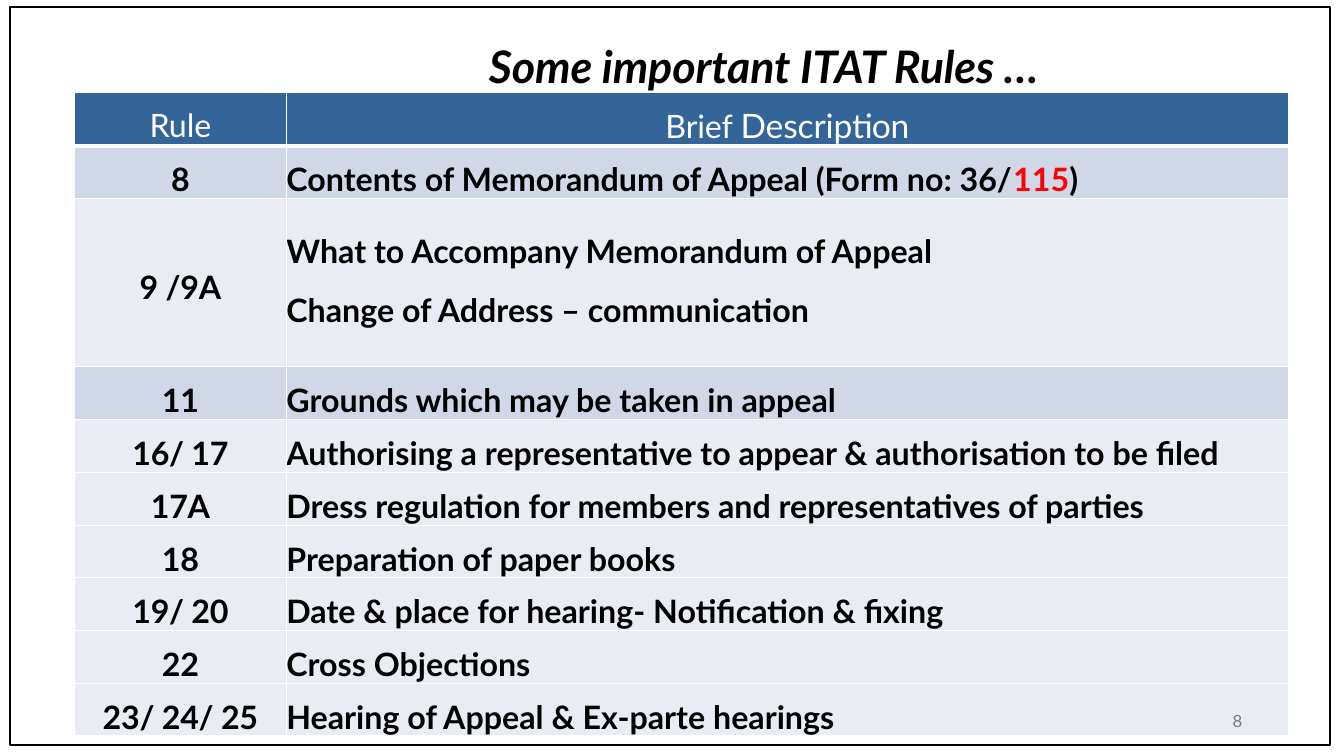
from lxml import etree
from pptx import Presentation
from pptx.dml.color import RGBColor
from pptx.enum.shapes import MSO_SHAPE
from pptx.enum.text import MSO_ANCHOR, PP_ALIGN
from pptx.oxml.ns import qn
from pptx.util import Inches, Pt

LEFT, MID, RIGHT = PP_ALIGN.LEFT, PP_ALIGN.CENTER, PP_ALIGN.RIGHT
TOP, CENTRE = MSO_ANCHOR.TOP, MSO_ANCHOR.MIDDLE
RECT = MSO_SHAPE.RECTANGLE

BLACK = RGBColor(0x00, 0x00, 0x00)
WHITE = RGBColor(0xFF, 0xFF, 0xFF)
RED = RGBColor(0xFF, 0x00, 0x00)
GREY = RGBColor(0x79, 0x79, 0x79)
BLUE = RGBColor(0x33, 0x65, 0x99)
DARK = RGBColor(0xD0, 0xD8, 0xE8)
PALE = RGBColor(0xE9, 0xEC, 0xF3)

# Rule, description lines, row fill
RULES = [
    ("8", ["Contents of Memorandum of Appeal (Form no: 36/|115|)"], DARK),
    ("9 /9A", ["What to Accompany Memorandum of Appeal",
               "Change of Address – communication"], PALE),
    ("11", ["Grounds which may be taken in appeal"], DARK),
    ("16/ 17", ["Authorising a representative to appear & "
                "authorisation to be filed"], PALE),
    ("17A", ["Dress regulation for members and representatives of parties"],
     PALE),
    ("18", ["Preparation of paper books"], PALE),
    ("19/ 20", ["Date & place for hearing- Notification & fixing"], PALE),
    ("22", ["Cross Objections"], PALE),
    ("23/ 24/ 25", ["Hearing of Appeal & Ex-parte hearings"], PALE),
]


class Deck:
    """Holds the style and the current slide."""
    font = "Lato"
    size = 23

    def __init__(self):
        self.prs = Presentation()
        self.prs.slide_width = Inches(13.33)
        self.prs.slide_height = Inches(7.5)
        self.slide = self.prs.slides.add_slide(self.prs.slide_layouts[6])

    def run(self, para, text, color, size=size, bold=False, italic=False,
            track=0):
        run = para.add_run()
        run.text = text
        font = run.font
        font.name, font.size = self.font, Pt(size)
        font.bold, font.italic = bold, italic
        font.color.rgb = color
        if track:
            run._r.get_or_add_rPr().set("spc", str(track))

    def text(self, text, x, y, w, h, align, color, **style):
        box = self.slide.shapes.add_textbox(
            Inches(x), Inches(y), Inches(w), Inches(h))
        frame = box.text_frame
        frame.word_wrap = True
        frame.vertical_anchor = CENTRE
        frame.margin_top = frame.margin_bottom = 0
        para = frame.paragraphs[0]
        para.alignment = align
        self.run(para, text, color, **style)

    def frame(self, x, y, w, h):
        box = self.slide.shapes.add_shape(
            RECT, Inches(x), Inches(y), Inches(w), Inches(h))
        box.shadow.inherit = False
        box.fill.background()
        box.line.color.rgb = BLACK
        box.line.width = Pt(0.96)

    def table(self, x, y, cols, rows):
        grid = self.slide.shapes.add_table(
            len(rows), len(cols), Inches(x), Inches(y),
            Inches(sum(cols)), Inches(sum(rows))).table
        for col, width in zip(grid.columns, cols):
            col.width = Inches(width)
        for row, height in zip(grid.rows, rows):
            row.height = Inches(height)
        return grid

    def cell(self, cell, fill, lines, align, top, anchor=TOP, gap=1.0,
             edges=(1, 1, 1, 1)):
        """Each line is a list of (text, style) runs."""
        cell.margin_left = cell.margin_right = cell.margin_bottom = 0
        cell.margin_top = Inches(top)
        cell.vertical_anchor = anchor
        props = cell._tc.get_or_add_tcPr()
        for side, width in zip("LRTB", edges):
            line = etree.SubElement(props, qn("a:ln" + side),
                                    w=str(Pt(width)))
            paint = etree.SubElement(line, qn("a:solidFill"))
            etree.SubElement(paint, qn("a:srgbClr"), val=str(WHITE))
        cell.fill.solid()
        cell.fill.fore_color.rgb = fill
        for i, runs in enumerate(lines):
            frame = cell.text_frame
            para = frame.paragraphs[0] if i == 0 else frame.add_paragraph()
            para.alignment = align
            para.line_spacing = gap
            for text, style in runs:
                self.run(para, text, **style)


def main():
    deck = Deck()

    # Title
    deck.text("Some important ITAT Rules …", 4.46, 0.38, 6.23, 0.54, MID,
              BLACK, size=32, bold=True, italic=True, track=-10)

    # Table header
    heights = [0.52, 0.52, 1.67] + [0.52] * 7
    grid = deck.table(0.74, 0.92, [2.1, 9.94], heights)
    head = {"color": WHITE, "track": -10}
    titles = [[("Rule", head)],
              [("Brief ", head), ("Description", {**head, "size": 24})]]
    for col, runs in enumerate(titles):
        deck.cell(grid.cell(0, col), BLUE, [runs], MID, 0.13,
                  edges=(1, 1, 1, 3))

    # Table body
    bold = {"color": BLACK, "bold": True}
    for row, (rule, lines, fill) in enumerate(RULES, 1):
        top = 0.13 if row == 1 else 0.14
        edges = (1, 1, 3 if row == 1 else 1, 1)
        tall = len(lines) > 1
        deck.cell(grid.cell(row, 0), fill, [[(rule, {**bold, "track": -20})]],
                  MID, 0.08 if tall else top, CENTRE if tall else TOP,
                  edges=edges)
        # Every second part between bars is red
        parts = [[(part, {**bold, "color": RED if i % 2 else BLACK})
                  for i, part in enumerate(line.split("|"))]
                 for line in lines]
        deck.cell(grid.cell(row, 1), fill, parts, LEFT, top,
                  gap=1.5 if tall else 1.0, edges=edges)

    # Border and page number
    deck.frame(0.1, 0.07, 13.09, 7.32)
    deck.text("8", 9.42, 6.95, 3, 0.4, RIGHT, GREY, size=12)

    deck.prs.save("out.pptx")


if __name__ == "__main__":
    main()
